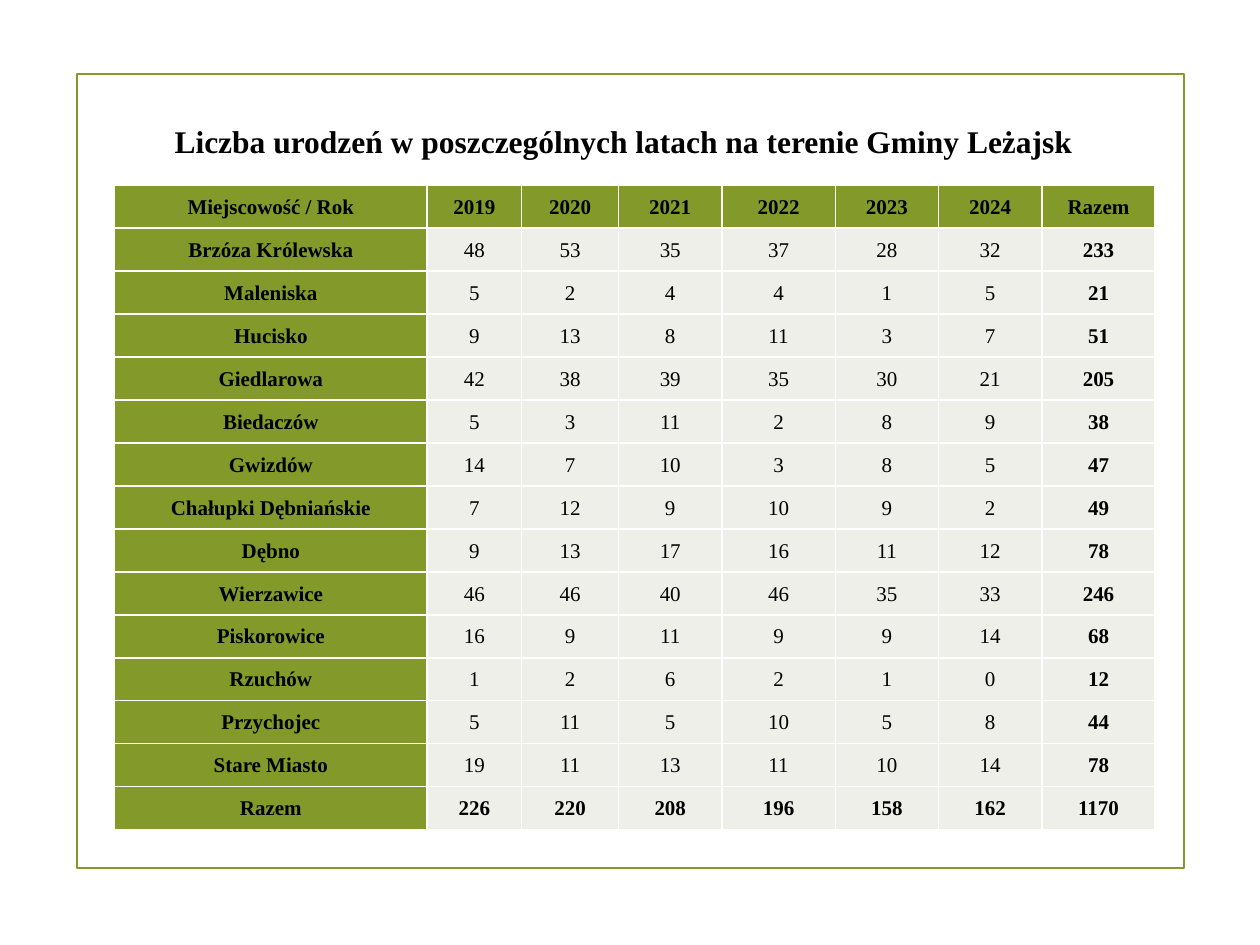
from lxml.etree import SubElement
from pptx import Presentation
from pptx.dml.color import RGBColor
from pptx.enum.shapes import MSO_SHAPE
from pptx.enum.text import MSO_ANCHOR, MSO_AUTO_SIZE, PP_ALIGN
from pptx.oxml.ns import qn
from pptx.util import Inches, Pt

COLORS = {"olive": "83992A", "pale": "EDEFE8", "white": "FFFFFF", "black": "000000"}
FONT = "Times New Roman"
TITLE = "Liczba urodzeń w poszczególnych latach na terenie Gminy Leżajsk"
COLUMN_WIDTHS = [2.48, 0.75, 0.77, 0.82, 0.9, 0.82, 0.82, 0.9]
TABLE_HEIGHT = 5.12
BIRTHS = [
    ("Miejscowość / Rok", 2019, 2020, 2021, 2022, 2023, 2024, "Razem"),
    ("Brzóza Królewska", 48, 53, 35, 37, 28, 32, 233),
    ("Maleniska", 5, 2, 4, 4, 1, 5, 21),
    ("Hucisko", 9, 13, 8, 11, 3, 7, 51),
    ("Giedlarowa", 42, 38, 39, 35, 30, 21, 205),
    ("Biedaczów", 5, 3, 11, 2, 8, 9, 38),
    ("Gwizdów", 14, 7, 10, 3, 8, 5, 47),
    ("Chałupki Dębniańskie", 7, 12, 9, 10, 9, 2, 49),
    ("Dębno", 9, 13, 17, 16, 11, 12, 78),
    ("Wierzawice", 46, 46, 40, 46, 35, 33, 246),
    ("Piskorowice", 16, 9, 11, 9, 9, 14, 68),
    ("Rzuchów", 1, 2, 6, 2, 1, 0, 12),
    ("Przychojec", 5, 11, 5, 10, 5, 8, 44),
    ("Stare Miasto", 19, 11, 13, 11, 10, 14, 78),
    ("Razem", 226, 220, 208, 196, 158, 162, 1170),
]


def rgb(name):
    return RGBColor.from_string(COLORS[name])


def write_text(frame, text, size=12, bold=False, color="black", align=PP_ALIGN.CENTER):
    para = frame.paragraphs[0]
    para.alignment = align
    span = para.add_run()
    span.text = text
    span.font.name = FONT
    span.font.size = Pt(size)
    span.font.bold = bold
    span.font.color.rgb = rgb(color)


def add_frame(page):
    frame = page.shapes.add_shape(
        MSO_SHAPE.RECTANGLE, Inches(0.61), Inches(0.59), Inches(8.79), Inches(6.3))
    frame.shadow.inherit = False
    frame.fill.background()
    frame.line.color.rgb = rgb("olive")
    frame.line.width = Pt(1.25)


def add_title(page):
    title = page.shapes.title
    title.left, title.top = Inches(0.7), Inches(0.87)
    title.width, title.height = Inches(8.5), Inches(0.5)
    box = title.text_frame
    box.auto_size = MSO_AUTO_SIZE.NONE
    box.word_wrap = True
    box.vertical_anchor = MSO_ANCHOR.MIDDLE
    write_text(box, TITLE, size=18, bold=True)


def add_borders(cell, color="white", width=1):
    """Draw all four sides; call before the fill is set, as borders come first."""
    properties = cell._tc.get_or_add_tcPr()
    for side in ("a:lnL", "a:lnR", "a:lnT", "a:lnB"):
        line = SubElement(properties, qn(side), w=str(Pt(width)))
        fill = SubElement(line, qn("a:solidFill"))
        SubElement(fill, qn("a:srgbClr"), val=COLORS[color])


def format_cell(cell, text, fill, bold):
    cell.margin_left = cell.margin_right = cell.margin_top = Inches(0.01)
    cell.margin_bottom = 0
    cell.vertical_anchor = MSO_ANCHOR.MIDDLE
    add_borders(cell)
    cell.fill.solid()
    cell.fill.fore_color.rgb = rgb(fill)
    write_text(cell.text_frame, text, bold=bold)


def add_births_table(page):
    last_row, last_column = len(BIRTHS) - 1, len(COLUMN_WIDTHS) - 1
    table = page.shapes.add_table(
        len(BIRTHS), len(COLUMN_WIDTHS), Inches(0.91), Inches(1.47),
        Inches(sum(COLUMN_WIDTHS)), Inches(TABLE_HEIGHT)).table
    for column, width in zip(table.columns, COLUMN_WIDTHS):
        column.width = Inches(width)
    for r, values in enumerate(BIRTHS):
        table.rows[r].height = Inches(TABLE_HEIGHT / len(BIRTHS))
        for c, value in enumerate(values):
            is_header = r == 0 or c == 0
            is_total = r == last_row or c == last_column
            format_cell(table.cell(r, c), str(value),
                        fill="olive" if is_header else "pale",
                        bold=is_header or is_total)


def main():
    deck = Presentation()
    deck.slide_width, deck.slide_height = Inches(10), Inches(7.5)
    page = deck.slides.add_slide(deck.slide_layouts[5])
    add_frame(page)
    add_title(page)
    add_births_table(page)
    deck.save("out.pptx")


if __name__ == "__main__":
    main()
